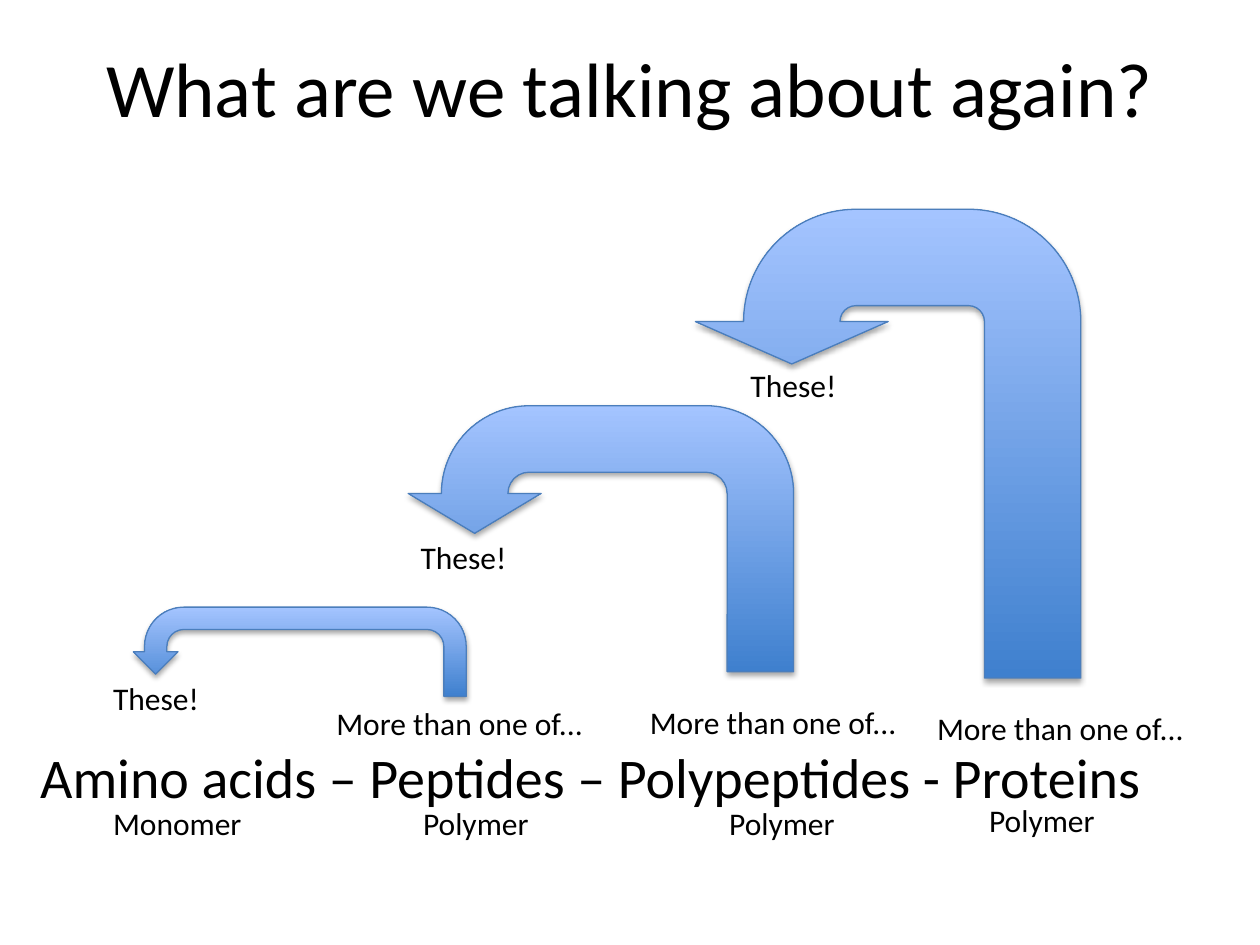
from dataclasses import dataclass

from lxml import etree
from pptx import Presentation
from pptx import util as u
from pptx.dml.color import RGBColor
from pptx.enum import shapes, text
from pptx.oxml.ns import qn

COLORS = {"text": "000000", "arrow_low": "3F80CE", "arrow_high": "A4C4FF",
          "outline": "4B7EBC", "shadow": "000000"}
FONT = "Calibri"
LABEL_HEIGHT = 1.02


@dataclass
class Step:
    """An arrow from a larger molecule back to its building block, in cm."""
    box: tuple[float, float, float, float]
    adjustments: tuple[float, ...]
    target: tuple[float, float]
    source: tuple[float, float]


@dataclass
class Kind:
    name: str
    left: float
    top: float
    width: float


STEPS = [
    Step((2.69, 12.24, 6.71, 1.8), (0.25, 0.25, 0.25, 0.44, 0.75),
         (2.03, 13.56), (6.53, 14.07)),
    Step((8.23, 8.18, 7.77, 5.36), (0.25, 0.25, 0.15, 0.44, 0.48),
         (8.23, 10.72), (12.85, 14.05)),
    Step((14.02, 4.22, 7.77, 9.45), (0.25, 0.25, 0.11, 0.44, 0.33),
         (14.88, 7.26), (18.64, 14.17)),
]
KINDS = [
    Kind("Monomer", 2.03, 16.08, 3.12),
    Kind("Polymer", 8.28, 16.08, 2.67),
    Kind("Polymer", 14.45, 16.08, 2.67),
    Kind("Polymer", 19.69, 16.03, 2.67),
]


def rgb(name: str) -> RGBColor:
    return RGBColor.from_string(COLORS[name])


def write(tf, content: str, *, size: float = 18, align=text.PP_ALIGN.LEFT,
          anchor=text.MSO_ANCHOR.TOP, wrap: bool = False) -> None:
    tf.word_wrap = wrap
    tf.auto_size = (text.MSO_AUTO_SIZE.NONE if wrap
                    else text.MSO_AUTO_SIZE.SHAPE_TO_FIT_TEXT)
    tf.vertical_anchor = anchor
    p = tf.paragraphs[0]
    p.alignment = align
    r = p.add_run()
    r.text = content
    r.font.name = FONT
    r.font.size = u.Pt(size)
    r.font.color.rgb = rgb("text")


def add_label(slide, content: str, left: float, top: float, width: float) -> None:
    sp = slide.shapes.add_textbox(*map(u.Cm, (left, top, width, LABEL_HEIGHT)))
    write(sp.text_frame, content)


def add_shadow(sp) -> None:
    """Give the shape a soft shadow straight below it."""
    sp.shadow.inherit = False
    effects = sp._element.spPr.find(qn("a:effectLst"))
    outer = etree.SubElement(effects, qn("a:outerShdw"), blurRad="40000",
                             dist="23000", dir="5400000", rotWithShape="0")
    color = etree.SubElement(outer, qn("a:srgbClr"), val=COLORS["shadow"])
    etree.SubElement(color, qn("a:alpha"), val="35000")


def add_arrow(slide, step: Step) -> None:
    sp = slide.shapes.add_shape(shapes.MSO_SHAPE.U_TURN_ARROW, *map(u.Cm, step.box))
    sp._element.spPr.xfrm.set("flipH", "1")
    for i, value in enumerate(step.adjustments):
        sp.adjustments[i] = value
    sp.fill.gradient()
    sp.fill.gradient_angle = 90
    for stop, name in zip(sp.fill.gradient_stops, ("arrow_low", "arrow_high")):
        stop.color.rgb = rgb(name)
    sp.line.color.rgb = rgb("outline")
    sp.line.width = u.Pt(0.75)
    add_shadow(sp)


def main() -> None:
    prs = Presentation()
    prs.slide_width, prs.slide_height = u.Cm(25.4), u.Cm(19.05)
    slide = prs.slides.add_slide(prs.slide_layouts[5])

    title = slide.shapes.title
    title.left, title.top, title.width, title.height = map(
        u.Cm, (1.27, 0.15, 22.86, 3.18))
    write(title.text_frame, "What are we talking about again?", size=44, wrap=True,
          align=text.PP_ALIGN.CENTER, anchor=text.MSO_ANCHOR.MIDDLE)

    chain = slide.shapes.add_textbox(*map(u.Cm, (0.56, 13.16, 23.98, 5.36)))
    chain.text_frame.margin_top = u.Cm(1.8)
    write(chain.text_frame, "Amino acids – Peptides – Polypeptides - Proteins",
          size=32, wrap=True)

    for step in STEPS:
        add_label(slide, "More than one of...", *step.source, 5.69)
        add_label(slide, "These!", *step.target, 2.26)
        add_arrow(slide, step)
    for kind in KINDS:
        add_label(slide, kind.name, kind.left, kind.top, kind.width)

    prs.save("out.pptx")


if __name__ == "__main__":
    main()
